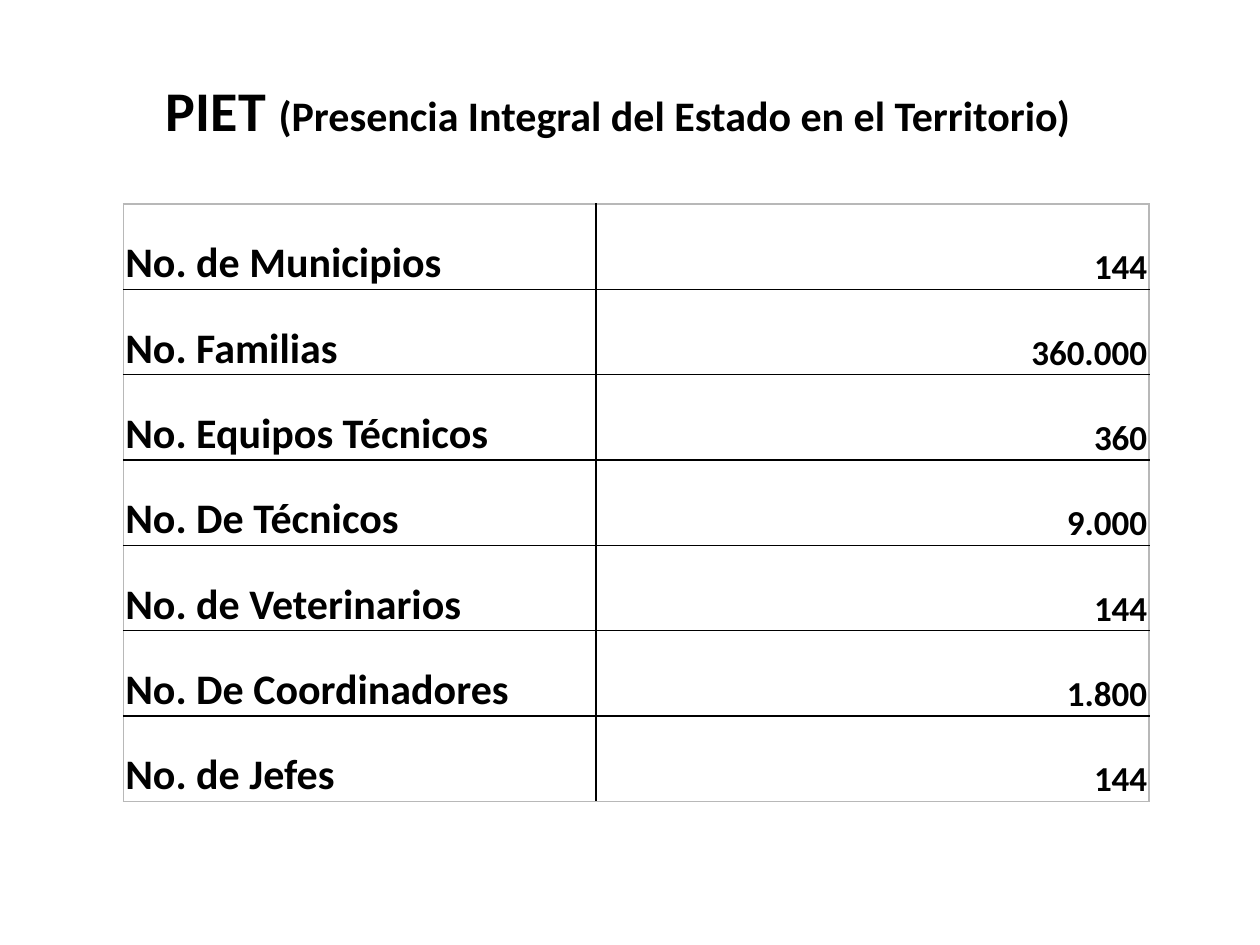
"""Build the PIET summary slide: a title over a two-column table."""
from lxml import etree
from pptx import Presentation
from pptx.dml.color import RGBColor
from pptx.enum.text import MSO_ANCHOR, PP_ALIGN
from pptx.oxml.ns import qn
from pptx.util import Pt

BOTTOM = MSO_ANCHOR.BOTTOM
LEFT, RIGHT = PP_ALIGN.LEFT, PP_ALIGN.RIGHT
BLACK = RGBColor(0x00, 0x00, 0x00)
GRAY = RGBColor(0xB8, 0xB8, 0xB8)

TITLE = [("PIET ", 32), ("(Presencia Integral del Estado en el Territorio)", 24)]
ROWS = [
    ("No. de Municipios", "144"),
    ("No. Familias", "360.000"),
    ("No. Equipos Técnicos", "360"),
    ("No. De Técnicos", "9.000"),
    ("No. de Veterinarios", "144"),
    ("No. De Coordinadores", "1.800"),
    ("No. de Jefes", "144"),
]
WIDTHS = (270, 316)
HEIGHT = 48.76
STYLES = ((24, LEFT), (20, RIGHT))


def apply(item, values):
    for name, value in values.items():
        setattr(item, name, value)


class Deck:
    font = {"name": "Calibri", "bold": True}
    inset = {"margin_left": Pt(1), "margin_right": Pt(1), "margin_top": Pt(1),
             "margin_bottom": 0, "vertical_anchor": BOTTOM}
    plain = {"first_row": False, "horz_banding": False}

    def __init__(self, width, height):
        self.file = Presentation()
        apply(self.file, {"slide_width": Pt(width), "slide_height": Pt(height)})
        self.slide = self.file.slides.add_slide(self.file.slide_layouts[6])

    def label(self, para, text, size):
        run = para.add_run()
        run.text = text
        apply(run.font, {**self.font, "size": Pt(size)})
        run.font.color.rgb = BLACK

    def title(self, parts, *box):
        frame = self.slide.shapes.add_textbox(*map(Pt, box)).text_frame
        frame.word_wrap = True
        for text, size in parts:
            self.label(frame.paragraphs[0], text, size)

    def border(self, cell, edges):
        props = cell._tc.get_or_add_tcPr()
        for spot, (side, color) in enumerate(edges.items()):
            line = etree.Element(qn(f"a:ln{side}"), w=str(Pt(1)))
            fill = etree.SubElement(line, qn("a:solidFill"))
            etree.SubElement(fill, qn("a:srgbClr"), val=str(color))
            props.insert(spot, line)

    def table(self, rows, left, top):
        count = len(rows)
        box = map(Pt, (left, top, sum(WIDTHS), HEIGHT * count))
        grid = self.slide.shapes.add_table(count, len(WIDTHS), *box).table
        apply(grid, self.plain)
        for col, width in zip(grid.columns, WIDTHS):
            col.width = Pt(width)
        for r, row in enumerate(rows):
            grid.rows[r].height = Pt(HEIGHT)
            for c, (text, (size, align)) in enumerate(zip(row, STYLES)):
                cell = grid.cell(r, c)
                apply(cell, self.inset)
                cell.fill.background()
                outer = {"L": c == 0, "R": c == len(row) - 1,
                         "T": r == 0, "B": r == count - 1}
                self.border(cell, {side: GRAY if edge else BLACK
                                   for side, edge in outer.items()})
                para = cell.text_frame.paragraphs[0]
                para.alignment = align
                self.label(para, text, size)


def main():
    deck = Deck(720, 540)
    deck.title(TITLE, 87.8, 39.6, 607, 46)
    deck.table(ROWS, 70.6, 116.6)
    deck.file.save("out.pptx")


if __name__ == "__main__":
    main()
